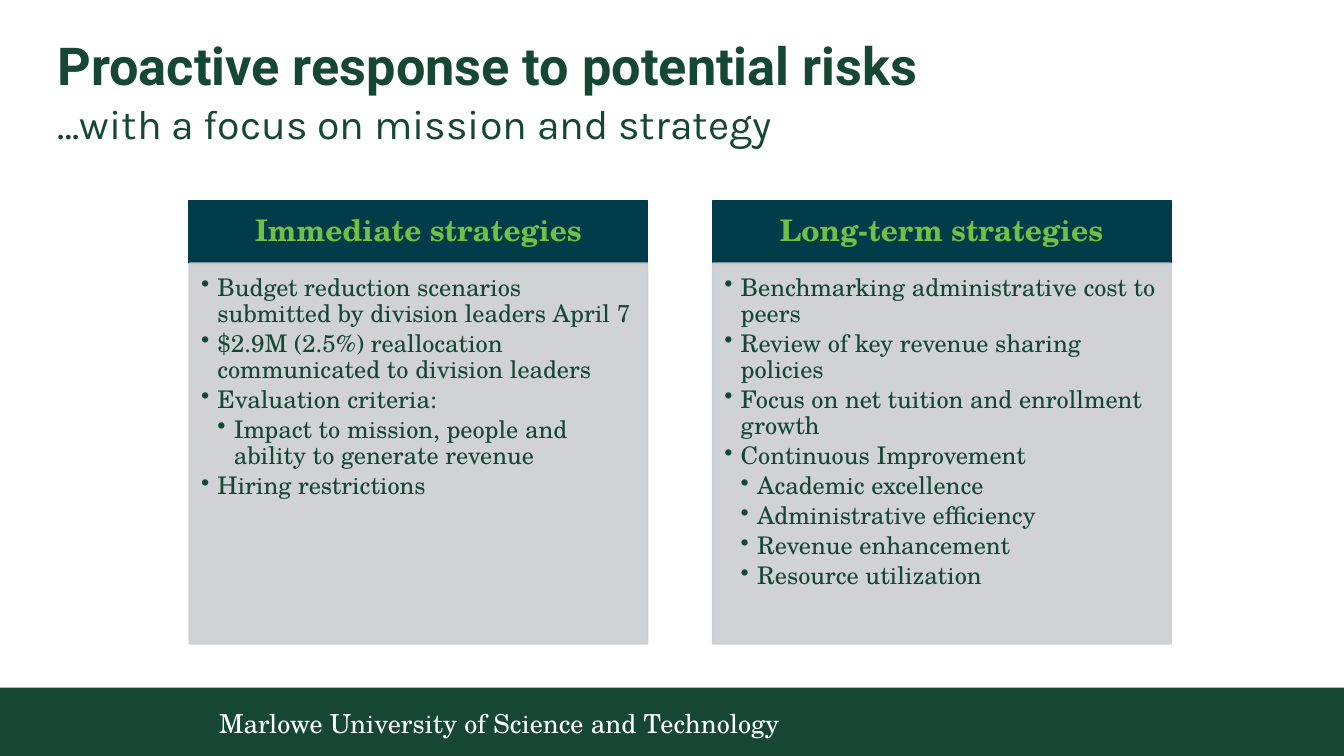
from pptx import Presentation
from pptx.dml.color import RGBColor
from pptx.enum.shapes import MSO_SHAPE as Shape
from pptx.enum.text import MSO_ANCHOR as Anchor, PP_ALIGN as Align
from pptx.oxml.ns import qn
from pptx.util import Cm, Pt
from lxml.etree import SubElement as Sub

HUES = {"green": "154734", "navy": "003B49", "lime": "72BF44",
        "grey": "CCCED0", "white": "FFFFFF"}
SERIF = "TeX Gyre Schola"

deck = Presentation()
deck.slide_width, deck.slide_height = Cm(25.4), Cm(14.29)
slide = deck.slides.add_slide(deck.slide_layouts[6])


def add_box(left, top, width, height, fill=None, pads=(0, 0, 0, 0),
            anchor=Anchor.TOP):
    """Add a filled rectangle, or a plain text box if there is no fill."""
    place = Cm(left), Cm(top), Cm(width), Cm(height)
    if fill:
        box = slide.shapes.add_shape(Shape.RECTANGLE, *place)
        box.shadow.inherit = False
        box.fill.solid()
        box.fill.fore_color.rgb = RGBColor.from_string(HUES[fill])
        box.line.color.rgb = RGBColor.from_string(HUES[fill])
        box.line.width = Pt(1)
    else:
        box = slide.shapes.add_textbox(*place)
    frame = box.text_frame
    frame.word_wrap = True
    frame.vertical_anchor = anchor
    (frame.margin_left, frame.margin_top,
     frame.margin_right, frame.margin_bottom) = map(Cm, pads)
    return box


def style(para, text, size, hue, face=SERIF, bold=False, align=Align.LEFT,
          lines=0.9):
    para.text = text
    para.alignment = align
    para.line_spacing = lines
    para.font.name, para.font.size, para.font.bold = face, Pt(size), bold
    para.font.color.rgb = RGBColor.from_string(HUES[hue])


# Footer
bar = add_box(-0.1, 13, 25.5, 1.29, "green")
bar.line.fill.background()
foot = add_box(3.89, 13.16, 16.13, 1.02, None, (0.25, 0.13, 0.25, 0.13),
               Anchor.MIDDLE)
style(foot.text_frame.paragraphs[0],
      "Marlowe University of Science and Technology", 14, "white", lines=1.0)
foot.text_frame.paragraphs[0].space_after = Pt(4.5)

# Title and subtitle
title = add_box(1.09, 0.76, 23.22, 1.12)
style(title.text_frame.paragraphs[0], "Proactive response to potential risks",
      28, "green", "Roboto", True)
sub = add_box(1.09, 1.96, 23.22, 0.86)
style(sub.text_frame.paragraphs[0], "…with a focus on mission and strategy",
      22, "green", "Karla")
sub.text_frame.paragraphs[0].space_before = Pt(3)
sub.text_frame.paragraphs[0].space_after = Pt(3)

# Strategy columns: heading, then (level, text) items
columns = [
    ("Immediate strategies", [
        (1, "Budget reduction scenarios submitted by division leaders April 7"),
        (1, "$2.9M (2.5%) reallocation communicated to division leaders"),
        (1, "Evaluation criteria:"),
        (2, "Impact to mission, people and ability to generate revenue"),
        (1, "Hiring restrictions")]),
    ("Long-term strategies", [
        (1, "Benchmarking administrative cost to peers"),
        (1, "Review of key revenue sharing policies"),
        (1, "Focus on net tuition and enrollment growth"),
        (1, "Continuous Improvement"),
        (2, "Academic excellence"),
        (2, "Administrative efficiency"),
        (2, "Revenue enhancement"),
        (2, "Resource utilization")]),
]
WIDE, STEP, DENT = 8.66, 9.89, 0.31

for col, (name, items) in enumerate(columns):
    left = 3.58 + col * STEP
    head = add_box(left, 3.79, WIDE, 1.19, "navy", (0.3, 0.18, 0.3, 0.18),
                   Anchor.MIDDLE)
    style(head.text_frame.paragraphs[0], name, 16, "lime", bold=True,
          align=Align.CENTER)

    # Slightly see-through body
    body = add_box(left, 4.98, WIDE, 7.19, "grey", (0.22, 0.22, 0.25, 0.28))
    for tint in body.element.spPr.iter(qn("a:srgbClr")):
        Sub(tint, qn("a:alpha"), val="90000")

    # Bulleted items
    frame = body.text_frame
    for row, (level, text) in enumerate(items):
        para = frame.add_paragraph() if row else frame.paragraphs[0]
        style(para, text, 13, "green")
        para.level = level
        para.space_after = Pt(2)
        props = para._p.get_or_add_pPr()
        props.set("marL", str(Cm(DENT * level)))
        props.set("indent", str(Cm(-DENT)))
        mark = props.makeelement(qn("a:buChar"), {"char": "•"})
        props.find(qn("a:defRPr")).addprevious(mark)

deck.save("out.pptx")
